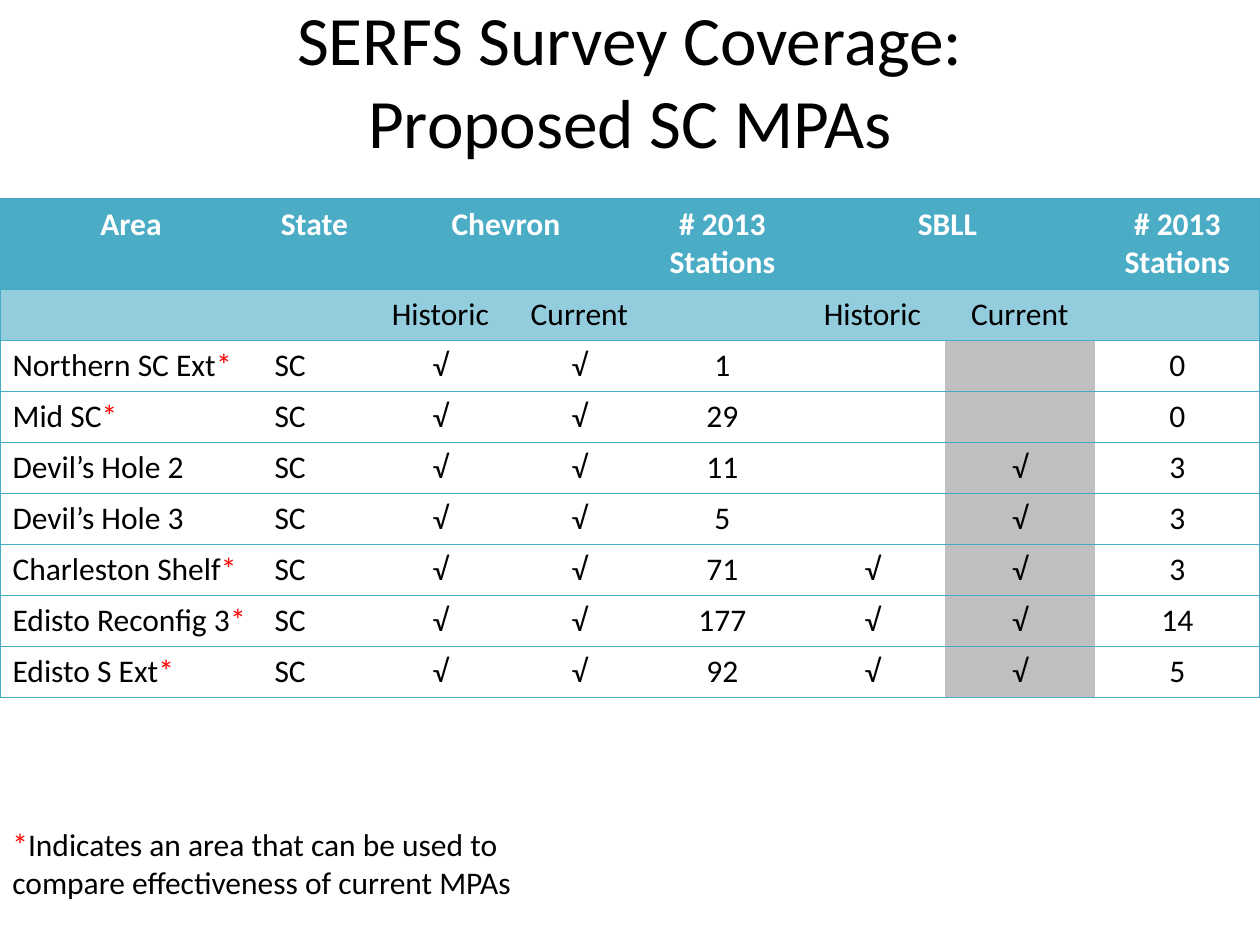
from dataclasses import dataclass

from lxml import etree
from pptx import Presentation
from pptx.dml.color import RGBColor
from pptx.enum.text import MSO_ANCHOR, MSO_AUTO_SIZE, PP_ALIGN
from pptx.oxml.ns import qn
from pptx.util import Emu, Pt

LEFT, CENTER = PP_ALIGN.LEFT, PP_ALIGN.CENTER
MIDDLE = MSO_ANCHOR.MIDDLE
NO_FIT = MSO_AUTO_SIZE.NONE
TITLE_ONLY = 5
PX_PER_INCH = 126


@dataclass(frozen=True)
class Theme:
    font: str = "Calibri"
    title_size: float = 39.6
    body_size: float = 18
    text: str = "000000"
    header_text: str = "FFFFFF"
    marker: str = "FF0000"
    header_fill: str = "4BACC6"
    subheader_fill: str = "93CDDD"
    current_fill: str = "BFBFBF"
    border: str = "46AAC5"
    border_width: float = 0.75


THEME = Theme()

COLUMN_WIDTHS = [262, 105, 147, 131, 155, 145, 150, 165]
HEADER_HEIGHT, ROW_HEIGHT = 90, 51
MERGED_HEADERS = [2, 5]
SBLL_CURRENT = 6
HEADER = ["Area", "State", "Chevron", "", "# 2013 Stations", "SBLL", "", "# 2013 Stations"]
SUBHEADER = ["", "", "Historic", "Current", "", "Historic", "Current", ""]
AREAS = [
    ["Northern SC Ext*", "SC", "√", "√", "1", "", "", "0"],
    ["Mid SC*", "SC", "√", "√", "29", "", "", "0"],
    ["Devil’s Hole 2", "SC", "√", "√", "11", "", "√", "3"],
    ["Devil’s Hole 3", "SC", "√", "√", "5", "", "√", "3"],
    ["Charleston Shelf*", "SC", "√", "√", "71", "√", "√", "3"],
    ["Edisto Reconfig 3*", "SC", "√", "√", "177", "√", "√", "14"],
    ["Edisto S Ext*", "SC", "√", "√", "92", "√", "√", "5"],
]


def px(length):
    return Emu(round(length * 914400 / PX_PER_INCH))


def add_span(para, text, size, color, bold):
    span = para.add_run()
    span.text = text
    span.font.name = THEME.font
    span.font.size = Pt(size)
    span.font.bold = bold
    span.font.color.rgb = RGBColor.from_string(color)


def write_text(frame, text, size=THEME.body_size, color=THEME.text, bold=False, align=LEFT):
    """Write text into a frame; newlines break lines and asterisks turn red."""
    para = frame.paragraphs[0]
    para.alignment = align
    for index, line in enumerate(text.split("\n")):
        if index:
            para.add_line_break()
        before, star, after = line.partition("*")
        for part, part_color in ((before, color), (star, THEME.marker), (after, color)):
            if part:
                add_span(para, part, size, part_color, bold)


def set_borders(cell, visible_sides):
    properties = cell._tc.get_or_add_tcPr()
    for side in "LRTB":
        line = etree.SubElement(properties, qn(f"a:ln{side}"), w=str(Pt(THEME.border_width)))
        if side in visible_sides:
            fill = etree.SubElement(line, qn("a:solidFill"))
            etree.SubElement(fill, qn("a:srgbClr"), val=THEME.border)
        else:
            etree.SubElement(line, qn("a:noFill"))


def fill_cell(cell, color):
    if color:
        cell.fill.solid()
        cell.fill.fore_color.rgb = RGBColor.from_string(color)
    else:
        cell.fill.background()


def cell_fill(row, column):
    if row == 0:
        return THEME.header_fill
    if row == 1:
        return THEME.subheader_fill
    return THEME.current_fill if column == SBLL_CURRENT else None


def add_title(page, text, left, top, width, height):
    title = page.shapes.title
    title.left, title.top, title.width, title.height = map(px, (left, top, width, height))
    title.text_frame.auto_size = NO_FIT
    title.text_frame.vertical_anchor = MIDDLE
    write_text(title.text_frame, text, size=THEME.title_size, align=CENTER)


def add_coverage_table(page, left, top):
    rows = [HEADER, SUBHEADER, *AREAS]
    heights = [HEADER_HEIGHT] + [ROW_HEIGHT] * (len(rows) - 1)
    table = page.shapes.add_table(
        len(rows), len(COLUMN_WIDTHS), px(left), px(top),
        px(sum(COLUMN_WIDTHS)), px(sum(heights)),
    ).table
    table.first_row = table.horz_banding = False
    for column, width in zip(table.columns, COLUMN_WIDTHS):
        column.width = px(width)
    for row, height in zip(table.rows, heights):
        row.height = px(height)

    last = len(COLUMN_WIDTHS) - 1
    for r, values in enumerate(rows):
        for c, value in enumerate(values):
            cell = table.cell(r, c)
            set_borders(cell, "TB" + ("L" if c == 0 else "") + ("R" if c == last else ""))
            fill_cell(cell, cell_fill(r, c))
            write_text(
                cell.text_frame, value, bold=r == 0,
                color=THEME.header_text if r == 0 else THEME.text,
                align=LEFT if r > 1 and c < 2 else CENTER,
            )
    for c in MERGED_HEADERS:
        table.cell(0, c).merge(table.cell(0, c + 1))


def add_note(page, text, left, top, width, height):
    box = page.shapes.add_textbox(px(left), px(top), px(width), px(height))
    box.text_frame.word_wrap = True
    write_text(box.text_frame, text)


def main():
    deck = Presentation()
    deck.slide_width, deck.slide_height = px(1260), px(945)
    page = deck.slides.add_slide(deck.slide_layouts[TITLE_ONLY])

    # Title
    add_title(page, "SERFS Survey Coverage:\nProposed SC MPAs", 63, 0, 1134, 158)
    # Survey coverage by area
    add_coverage_table(page, 0, 199)
    # Footnote
    add_note(
        page,
        "*Indicates an area that can be used to compare effectiveness of current MPAs",
        0, 819, 609, 89,
    )

    deck.save("out.pptx")


if __name__ == "__main__":
    main()
